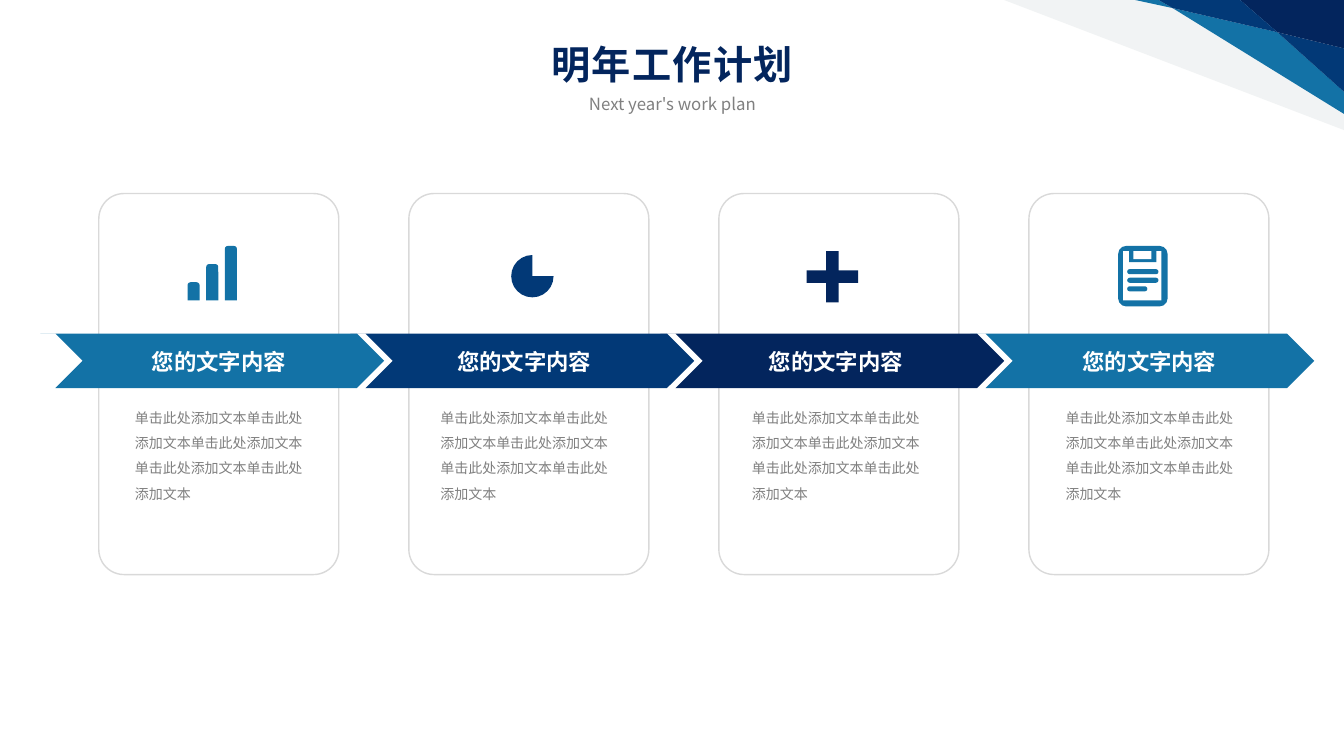
from dataclasses import dataclass

from lxml import etree
from pptx import Presentation
from pptx.dml.color import RGBColor
from pptx.enum.shapes import MSO_SHAPE
from pptx.enum.text import MSO_ANCHOR, PP_ALIGN
from pptx.util import Inches, Pt

FONT = "Noto Sans CJK SC"
COLORS = {
    "navy": "03255D",
    "blue": "023977",
    "teal": "1372A6",
    "mist": "F1F3F4",
    "border": "D9D9D9",
    "gray": "808080",
    "white": "FFFFFF",
}
PITCH = 3.075
HEADING = "您的文字内容"
BODY = "单击此处添加文本" * 5


@dataclass
class Step:
    color: str
    text_left: float


@dataclass
class Facet:
    color: str
    points: list[tuple[float, float]]


STEPS = [Step("teal", 1.03), Step("blue", 4.06), Step("navy", 7.15), Step("teal", 10.26)]
FACETS = [
    Facet("mist", [(9.96, 0), (13.33, 1.29), (13.33, 0)]),
    Facet("teal", [(11.26, 0), (11.63, 0.08), (11.49, 0)]),
    Facet("teal", [(11.63, 0.08), (13.33, 1.13), (13.33, 0.91), (12.67, 0.32)]),
    Facet("blue", [(12.67, 0.32), (13.33, 0.91), (13.33, 0.48)]),
    Facet("navy", [(12.3, 0), (12.67, 0.32), (13.33, 0.48), (13.33, 0)]),
    Facet("blue", [(11.49, 0), (11.63, 0.08), (12.67, 0.32), (12.3, 0)]),
]
CHEVRON = [(0.4, 3.31), (3.54, 3.31), (3.81, 3.58), (3.54, 3.85),
           (0.55, 3.85), (0.82, 3.58), (0.55, 3.31)]

deck = Presentation()
deck.slide_width, deck.slide_height = Inches(13.33), Inches(7.5)
page = deck.slides.add_slide(deck.slide_layouts[6])


def rgb(name: str) -> RGBColor:
    return RGBColor.from_string(COLORS[name])


def paint(shape, fill: str | None, line: str | None = None) -> None:
    shape.shadow.inherit = False
    if fill:
        shape.fill.solid()
        shape.fill.fore_color.rgb = rgb(fill)
    else:
        shape.fill.background()
    if line:
        shape.line.color.rgb = rgb(line)
        shape.line.width = Pt(1)
    else:
        shape.line.fill.background()


def add_preset(kind: MSO_SHAPE, left: float, top: float, width: float, height: float,
               fill: str | None, line: str | None = None, adjust: float | None = None) -> None:
    shape = page.shapes.add_shape(kind, Inches(left), Inches(top), Inches(width), Inches(height))
    if adjust is not None:
        shape.adjustments[0] = adjust
    paint(shape, fill, line)


def add_polygon(points: list[tuple[float, float]], fill: str) -> None:
    corners = [(Inches(x), Inches(y)) for x, y in points]
    builder = page.shapes.build_freeform(*corners[0])
    builder.add_line_segments(corners[1:], close=True)
    paint(builder.convert_to_shape(), fill)


def add_text(text: str, left: float, top: float, width: float, height: float, *,
             size: float, color: str, bold: bool = False, align: PP_ALIGN = PP_ALIGN.CENTER,
             anchor: MSO_ANCHOR = MSO_ANCHOR.MIDDLE, line_spacing: float | None = None,
             tracking: float | None = None) -> None:
    box = page.shapes.add_textbox(Inches(left), Inches(top), Inches(width), Inches(height))
    frame = box.text_frame
    frame.word_wrap = True
    frame.vertical_anchor = anchor
    para = frame.paragraphs[0]
    para.alignment = align
    para.line_spacing = line_spacing
    span = para.add_run()
    span.text = text
    span.font.name = FONT
    span.font.size = Pt(size)
    span.font.bold = bold
    span.font.color.rgb = rgb(color)
    properties = span.font._element
    if tracking:
        properties.set("spc", str(int(tracking * 100)))
    # East Asian typeface follows the Latin one
    latin = properties.find("{*}latin")
    east_asian = etree.Element(latin.tag.replace("latin", "ea"), typeface=FONT)
    latin.addnext(east_asian)


# Corner decoration
for facet in FACETS:
    add_polygon(facet.points, facet.color)

# Title
add_text("明年工作计划", 0, 0.35, 13.33, 0.57, size=28, color="navy", bold=True, tracking=1)
add_text("Next year's work plan", 5.04, 0.88, 3.26, 0.3, size=12, color="gray")

# Cards with chevron banners
for index, step in enumerate(STEPS):
    shift = index * PITCH
    add_preset(MSO_SHAPE.ROUNDED_RECTANGLE, 0.98 + shift, 1.92, 2.38, 3.78,
               None, "border", 0.105)
    add_polygon([(x + shift, y) for x, y in CHEVRON], step.color)

# Card text
for step in STEPS:
    add_text(HEADING, step.text_left, 3.4, 2.28, 0.37, size=16, color="white", bold=True)
    add_text(BODY, step.text_left + 0.21, 3.93, 1.95, 1.19, size=10, color="gray",
             align=PP_ALIGN.LEFT, anchor=MSO_ANCHOR.TOP, line_spacing=1.5)

# Bar icon
for index in range(3):
    height = 0.18 * (index + 1)
    add_preset(MSO_SHAPE.ROUND_2_SAME_RECTANGLE, 1.86 + 0.185 * index, 2.98 - height,
               0.12, height, "teal", adjust=0.25)

# Pie and plus icons
add_preset(MSO_SHAPE.PIE, 5.07, 2.53, 0.42, 0.42, "blue")
add_preset(MSO_SHAPE.CROSS, 8, 2.49, 0.51, 0.51, "navy", adjust=0.378)

# Clipboard icon
add_preset(MSO_SHAPE.ROUNDED_RECTANGLE, 11.09, 2.44, 0.49, 0.6, "teal", adjust=0.16)
add_preset(MSO_SHAPE.RECTANGLE, 11.14, 2.49, 0.38, 0.49, "white")
add_preset(MSO_SHAPE.ROUND_2_SAME_RECTANGLE, 11.2, 2.48, 0.27, 0.12, "teal", adjust=0)
add_preset(MSO_SHAPE.RECTANGLE, 11.24, 2.49, 0.18, 0.08, "white")
for index, width in enumerate([0.31, 0.31, 0.2]):
    add_preset(MSO_SHAPE.ROUNDED_RECTANGLE, 11.18, 2.67 + 0.085 * index, width, 0.05,
               "teal", adjust=0.5)

deck.save("out.pptx")
